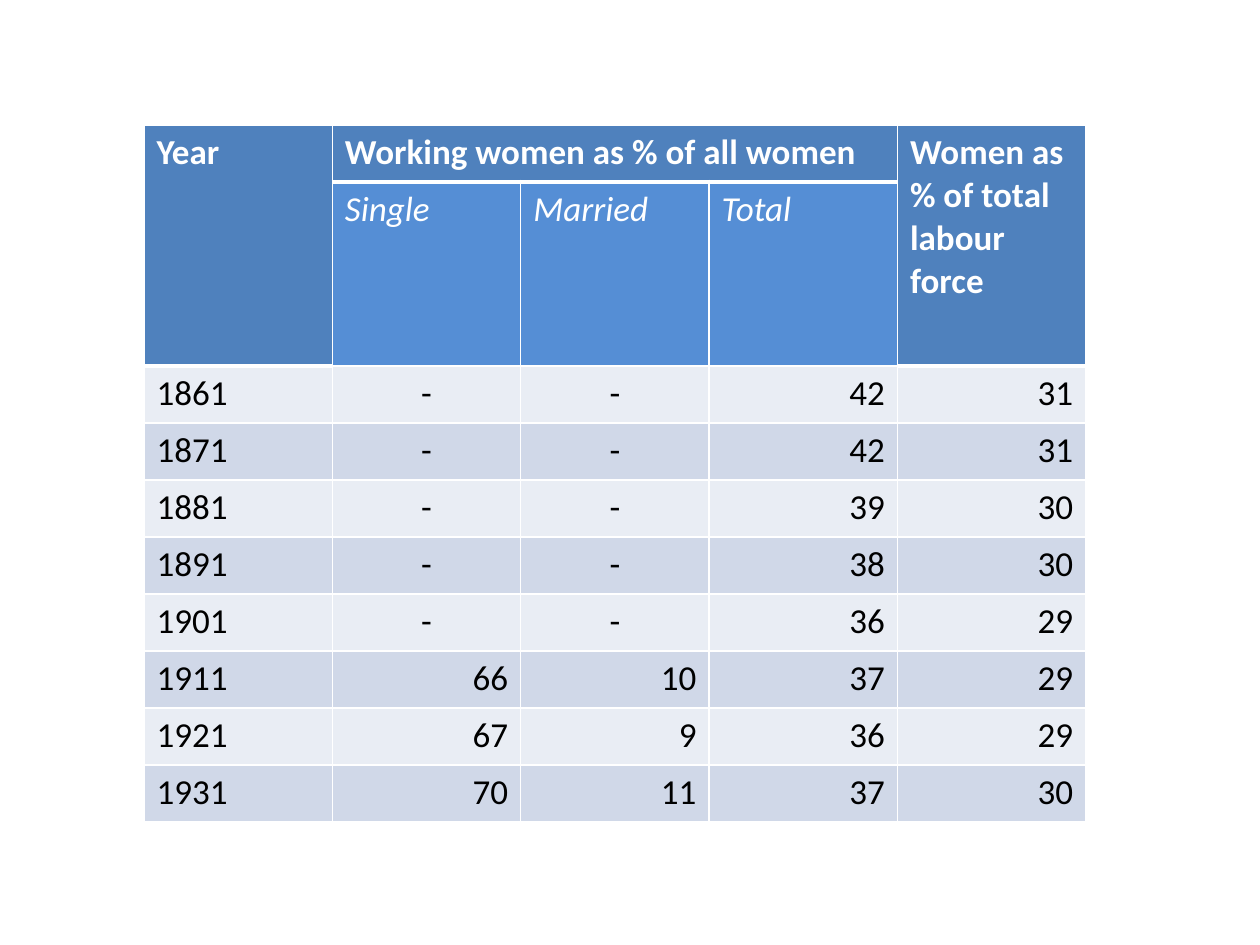
from lxml.etree import SubElement
from pptx import Presentation
from pptx.dml.color import RGBColor
from pptx.enum.text import PP_ALIGN
from pptx.oxml.ns import qn
from pptx.util import Emu, Pt

PX = 914400 / 126


def px(n):
    return Emu(round(n * PX))


def write(cell, text, color="000000", bold=False, italic=False, align=PP_ALIGN.LEFT):
    p = cell.text_frame.paragraphs[0]
    p.alignment = align
    r = p.add_run()
    r.text = text
    r.font.name = "Calibri"
    r.font.size = Pt(20)
    r.font.bold = bold
    r.font.italic = italic
    r.font.color.rgb = RGBColor.from_string(color)


prs = Presentation()
prs.slide_width, prs.slide_height = px(1260), px(945)
s = prs.slides.add_slide(prs.slide_layouts[6])

data = [
    ("1861", "-", "-", "42", "31"),
    ("1871", "-", "-", "42", "31"),
    ("1881", "-", "-", "39", "30"),
    ("1891", "-", "-", "38", "30"),
    ("1901", "-", "-", "36", "29"),
    ("1911", "66", "10", "37", "29"),
    ("1921", "67", "9", "36", "29"),
    ("1931", "70", "11", "37", "30"),
]
n_rows, n_cols = len(data) + 2, 5
table = s.shapes.add_table(n_rows, n_cols, px(144), px(125), px(942), px(639)).table
for col in table.columns:
    col.width = px(942 / n_cols)
for i, row in enumerate(table.rows):
    row.height = px(126 if i == 1 else 57)

for i in range(n_rows):
    for j in range(n_cols):
        cell = table.cell(i, j)
        outer = j in (0, n_cols - 1)
        if i == 0 or (i == 1 and outer):
            fill = "4F81BD"
        elif i == 1:
            fill = "558ED5"
        else:
            fill = ("E9EDF4", "D0D8E8")[i % 2]
        thick_bottom = i == 0 or (i == 1 and outer)
        thick_top = i == (2 if outer else 1)
        tcPr = cell._tc.get_or_add_tcPr()
        for side, thick in (("L", False), ("R", False), ("T", thick_top), ("B", thick_bottom)):
            ln = SubElement(tcPr, qn(f"a:ln{side}"), w=str(Pt(3 if thick else 1)))
            SubElement(SubElement(ln, qn("a:solidFill")), qn("a:srgbClr"), val="FFFFFF")
        cell.fill.solid()
        cell.fill.fore_color.rgb = RGBColor.from_string(fill)

table.cell(0, 0).merge(table.cell(1, 0))
table.cell(0, 1).merge(table.cell(0, 3))
table.cell(0, 4).merge(table.cell(1, 4))

heads = {0: "Year", 1: "Working women as % of all women", 4: "Women as % of total labour force"}
for j, text in heads.items():
    write(table.cell(0, j), text, color="FFFFFF", bold=True)
for j, text in enumerate(("Single", "Married", "Total"), 1):
    write(table.cell(1, j), text, color="FFFFFF", italic=True)
for i, values in enumerate(data, 2):
    for j, text in enumerate(values):
        if j == 0:
            align = PP_ALIGN.LEFT
        else:
            align = PP_ALIGN.CENTER if text == "-" else PP_ALIGN.RIGHT
        write(table.cell(i, j), text, align=align)

prs.save("out.pptx")
